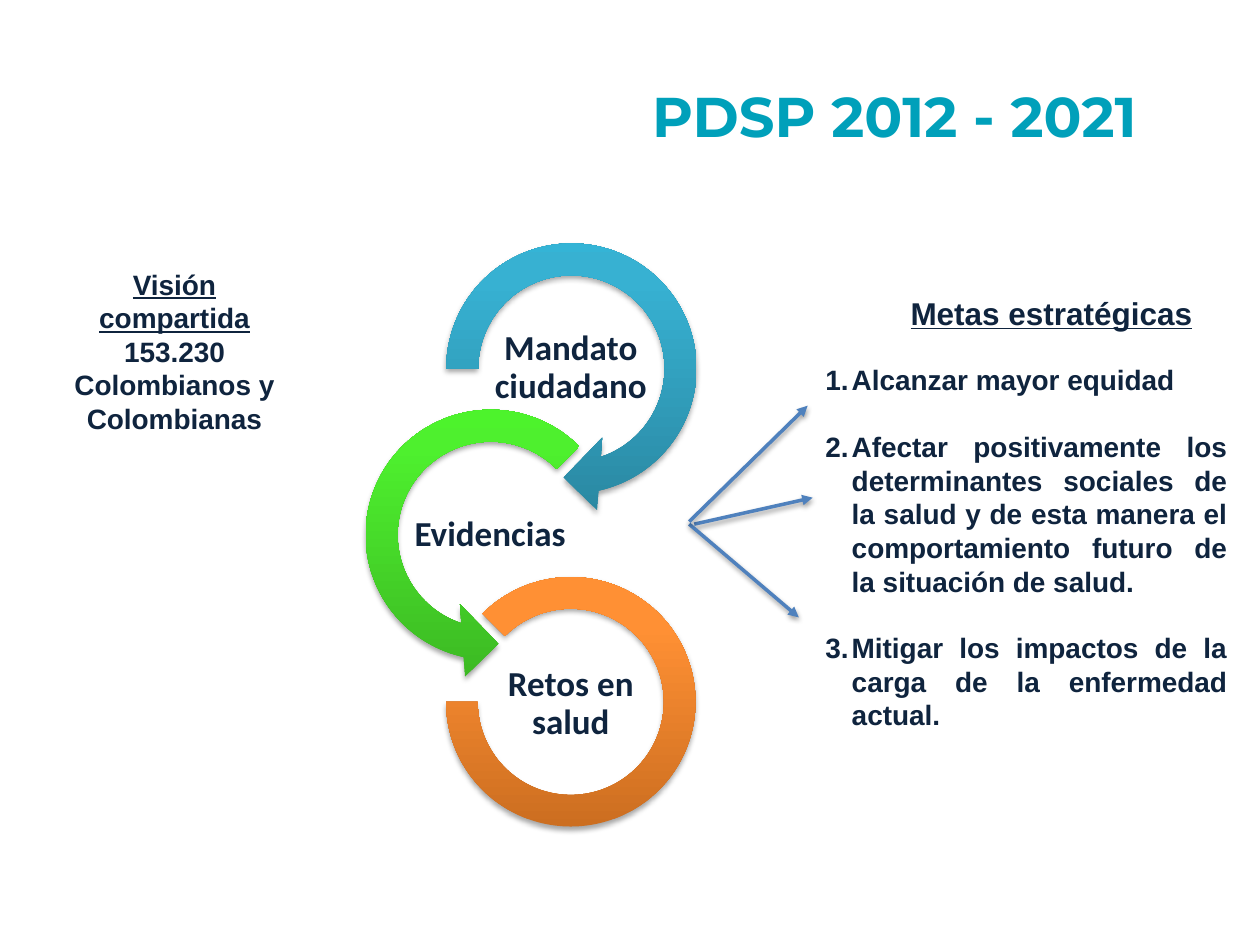
from lxml import etree
from pptx import Presentation
from pptx.dml.color import RGBColor
from pptx.enum.shapes import MSO_CONNECTOR, MSO_SHAPE
from pptx.enum.text import MSO_ANCHOR, PP_ALIGN
from pptx.oxml.ns import qn
from pptx.util import Inches, Pt

CENTER, JUSTIFY = PP_ALIGN.CENTER, PP_ALIGN.JUSTIFY
TOP, MIDDLE = MSO_ANCHOR.TOP, MSO_ANCHOR.MIDDLE


class Theme:
    ink = "0F243E"
    title = "00A0BA"
    arrow = "4F81BD"
    blue = ("2A88A2", "37B1D2", "34B4D6")
    green = ("3CB923", "4EF02E", "4CF52A")
    orange = ("CC6E20", "FF9034", "FF9136")
    body_font, ring_font, title_font = "Arial", "Calibri", "Montserrat"
    body_size, heading_size, ring_size, title_size = 16, 18, 20, 32


deck = Presentation()
deck.slide_width, deck.slide_height = Inches(10), Inches(7.5)
page = deck.slides.add_slide(deck.slide_layouts[6])
COL, ROW = deck.slide_width / 100, deck.slide_height / 75


def add_text(place, lines, font, size, color=Theme.ink, align=CENTER,
             anchor=TOP, margins=(0.06, 0.03)):
    """Add a bold text box at grid cells; lines are (text, underlined) pairs."""
    left, top, width, height = place
    box = page.shapes.add_textbox(int(left * COL), int(top * ROW),
                                  int(width * COL), int(height * ROW))
    frame = box.text_frame
    frame.word_wrap = True
    frame.vertical_anchor = anchor
    frame.margin_left = frame.margin_right = Inches(margins[0])
    frame.margin_top = frame.margin_bottom = Inches(margins[1])
    for index, (text, underlined) in enumerate(lines):
        para = frame.add_paragraph() if index else frame.paragraphs[0]
        para.alignment = align
        span = para.add_run()
        span.text = text
        span.font.name, span.font.size = font, Pt(size)
        span.font.bold, span.font.underline = True, underlined
        span.font.color.rgb = RGBColor.from_string(color)
    return frame


def add_shadow(shape, distance, opacity):
    """Drop a soft black shadow straight down; call after fill and line."""
    effects = etree.SubElement(shape._element.spPr, qn("a:effectLst"))
    shadow = etree.SubElement(
        effects, qn("a:outerShdw"), blurRad=str(Pt(3.1)),
        dist=str(Pt(distance)), dir="5400000", rotWithShape="0")
    black = etree.SubElement(shadow, qn("a:srgbClr"), val="000000")
    etree.SubElement(black, qn("a:alpha"), val=str(opacity * 1000))


# Chain of three rings, each with its label
rings = [
    ("Mandato ciudadano", MSO_SHAPE.CIRCULAR_ARROW, (33.8, 17.7, 23.1),
     (0.11, 11.42, 45, 108, 0.125), Theme.blue, (38.9, 26)),
    ("Evidencias", MSO_SHAPE.LEFT_CIRCULAR_ARROW, (27.4, 30.9, 23.1),
     (0.11, 11.42, 63, 189, 0.125), Theme.green, (32.5, 39.3)),
    ("Retos en salud", MSO_SHAPE.BLOCK_ARC, (35.4, 45.8, 19.8),
     (135, 108, 0.127), Theme.orange, (38.9, 52.7)),
]
for label, outline, (left, top, size), adjustments, colors, label_at in rings:
    ring = page.shapes.add_shape(outline, int(left * COL), int(top * ROW),
                                 int(size * COL), int(size * ROW))
    for index, value in enumerate(adjustments):
        ring.adjustments[index] = value
    ring.fill.gradient()
    ring.fill.gradient_angle = 90
    stops = ring._element.spPr.find(".//" + qn("a:gsLst"))
    for stop in list(stops):
        stops.remove(stop)
    for share, color in zip((0, 80, 100), colors):
        stop = etree.SubElement(stops, qn("a:gs"), pos=str(share * 1000))
        etree.SubElement(stop, qn("a:srgbClr"), val=color)
    ring.line.fill.background()
    add_shadow(ring, 1.8, 35)
    caption = add_text((*label_at, 12.8, 6.4), [(label, False)],
                       Theme.ring_font, Theme.ring_size,
                       anchor=MIDDLE, margins=(0.01, 0.01))
    caption.paragraphs[0].line_spacing = 0.9

# Shared vision and strategic goals
add_text((4.3, 20.9, 19.1, 11.3),
         [("Visión compartida", True),
          ("153.230 Colombianos y Colombianas", False)],
         Theme.body_font, Theme.body_size)

goals = [
    "Alcanzar mayor equidad",
    "Afectar positivamente los determinantes sociales de la salud y de esta "
    "manera el comportamiento futuro de la situación de salud.",
    "Mitigar los impactos de la carga de la enfermedad actual.",
]
goal_list = add_text((64.9, 28.5, 33.1, 32.2), [(goal, False) for goal in goals],
                     Theme.body_font, Theme.body_size, align=JUSTIFY)
for index, para in enumerate(goal_list.paragraphs):
    if index:
        para.space_before = Pt(19)
    properties = para._p.get_or_add_pPr()
    properties.set("marL", str(Inches(0.21)))
    properties.set("indent", str(-Inches(0.21)))
    etree.SubElement(properties, qn("a:buFont"), typeface="+mj-lt")
    etree.SubElement(properties, qn("a:buAutoNum"), type="arabicPeriod")

# Arrows fanning out to the goals
for x1, y1, x2, y2 in [(55.1, 41.6, 64.5, 39.5),
                       (54.7, 41.6, 63.4, 49),
                       (54.7, 41.4, 64.1, 32.2)]:
    arrow = page.shapes.add_connector(
        MSO_CONNECTOR.STRAIGHT, int(x1 * COL), int(y1 * ROW),
        int(x2 * COL), int(y2 * ROW))
    arrow.line.color.rgb = RGBColor.from_string(Theme.arrow)
    arrow.line.width = Pt(2)
    etree.SubElement(arrow.line._get_or_add_ln(), qn("a:tailEnd"), type="triangle")
    add_shadow(arrow, 1.6, 38)

add_text((68.9, 23, 29.1, 3.6), [("Metas estratégicas", True)],
         Theme.body_font, Theme.heading_size)
add_text((43.2, 2.8, 55.6, 12.7), [("PDSP 2012 - 2021", False)],
         Theme.title_font, Theme.title_size, Theme.title,
         anchor=MIDDLE, margins=(0.1, 0.05))

deck.save("out.pptx")
